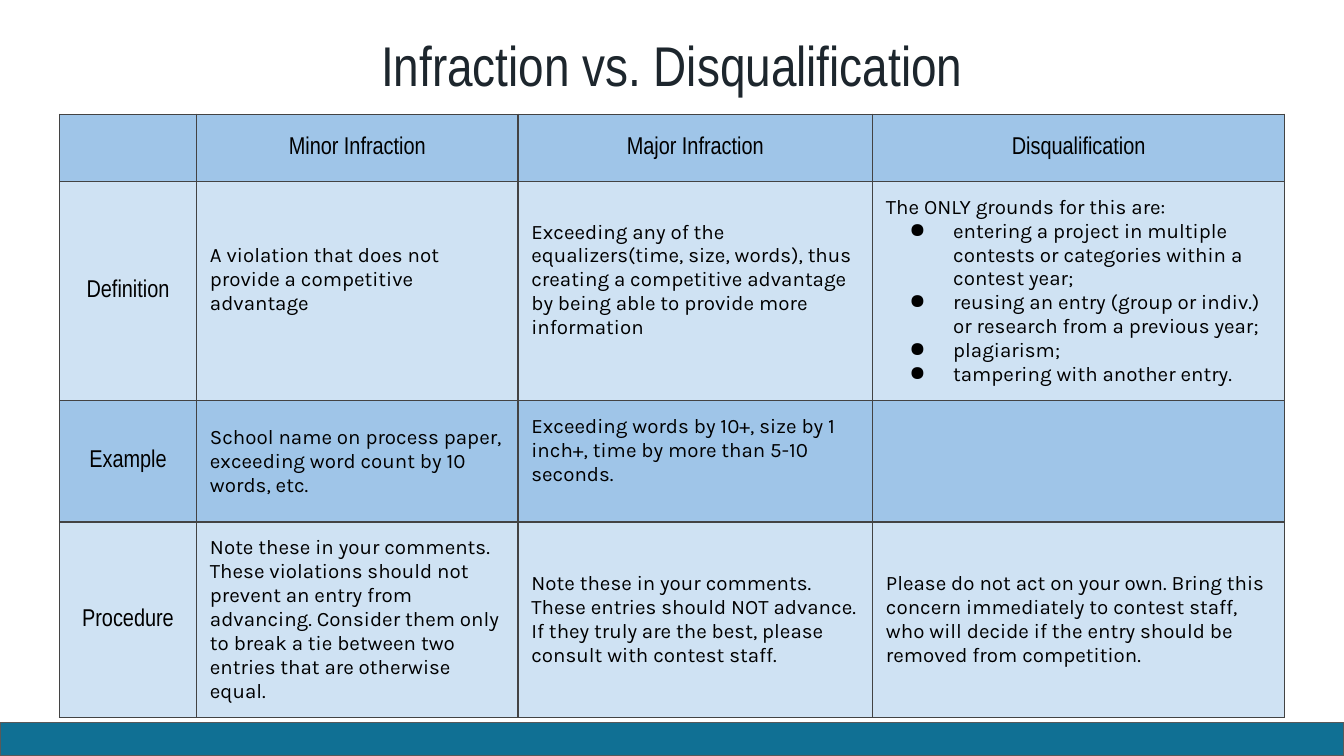
from dataclasses import dataclass

from lxml.etree import SubElement
from pptx import Presentation
from pptx.dml.color import RGBColor
from pptx.enum.shapes import MSO_SHAPE
from pptx.enum.text import MSO_ANCHOR, MSO_AUTO_SIZE, PP_ALIGN
from pptx.oxml.ns import qn
from pptx.util import Pt


@dataclass(frozen=True)
class Theme:
    title: str = "1D262D"
    text: str = "000000"
    bar: str = "107094"
    bar_line: str = "595959"
    border: str = "434343"
    bands: tuple = ("9FC5E8", "CFE2F3")
    head_font: str = "Arial Narrow"
    body_font: str = "Karla"
    title_size: float = 30
    head_size: float = 13
    body_size: float = 11
    line: float = 0.75
    inset: float = 7.2


THEME = Theme()
SLIDE_W, SLIDE_H = 720, 405
COL_WIDTHS = (73.5, 172.2, 190, 220.8)
ROW_HEIGHTS = (36, 117.5, 65, 104.8)
BULLET = "● "

ROWS = (
    ("", "Minor Infraction", "Major Infraction", "Disqualification"),
    ("Definition",
     "A violation that does not provide a competitive advantage",
     "Exceeding any of the equalizers(time, size, words), thus creating a "
     "competitive advantage by being able to provide more information",
     "The ONLY grounds for this are:\n"
     "● entering a project in multiple contests or categories within a contest year;\n"
     "● reusing an entry (group or indiv.) or research from a previous year;\n"
     "● plagiarism;\n"
     "● tampering with another entry."),
    ("Example",
     "School name on process paper, exceeding word count by 10 words, etc.",
     "Exceeding words by 10+, size by 1 inch+, time by more than 5-10 seconds.",
     ""),
    ("Procedure",
     "Note these in your comments. These violations should not prevent an entry "
     "from advancing. Consider them only to break a tie between two entries that "
     "are otherwise equal.",
     "Note these in your comments. These entries should NOT advance. If they "
     "truly are the best, please consult with contest staff.",
     "Please do not act on your own. Bring this concern immediately to contest staff, "
     "who will decide if the entry should be removed from competition."),
)
# Cells (row, column) whose text sits above the middle
RAISED = {(1, 1), (1, 2), (2, 2)}
RAISED_INSET = 19


def rgb(value):
    return RGBColor.from_string(value)


def style_font(font, name, size, color):
    font.name, font.size = name, Pt(size)
    font.color.rgb = rgb(color)


def add_title(s, text, left, top, width, height):
    sp = s.shapes.title
    sp.left, sp.top, sp.width, sp.height = map(Pt, (left, top, width, height))
    tf = sp.text_frame
    tf.text = text
    tf.auto_size = MSO_AUTO_SIZE.NONE
    tf.vertical_anchor = MSO_ANCHOR.TOP
    tf.margin_left = tf.margin_right = Pt(THEME.inset)
    tf.margin_top = tf.margin_bottom = Pt(THEME.inset)
    p = tf.paragraphs[0]
    p.alignment = PP_ALIGN.CENTER
    style_font(p.runs[0].font, THEME.head_font, THEME.title_size, THEME.title)


def add_bar(s, height):
    sp = s.shapes.add_shape(MSO_SHAPE.RECTANGLE, 0, Pt(SLIDE_H - height),
                            Pt(SLIDE_W), Pt(height))
    sp.shadow.inherit = False
    sp.fill.solid()
    sp.fill.fore_color.rgb = rgb(THEME.bar)
    sp.line.color.rgb = rgb(THEME.bar_line)
    sp.line.width = Pt(THEME.line)


def add_bullet(p):
    pPr = p._p.get_or_add_pPr()
    pPr.set("marL", str(Pt(36)))
    pPr.set("indent", str(Pt(-23.5)))
    color = SubElement(pPr, qn("a:buClr"))
    SubElement(color, qn("a:srgbClr"), val=THEME.text)
    SubElement(pPr, qn("a:buChar"), char=BULLET.strip())


def set_borders(cell):
    # Borders come before the fill in the cell properties
    tcPr = cell._tc.get_or_add_tcPr()
    for side in ("lnL", "lnR", "lnT", "lnB"):
        ln = SubElement(tcPr, qn(f"a:{side}"), w=str(Pt(THEME.line)))
        fill = SubElement(ln, qn("a:solidFill"))
        SubElement(fill, qn("a:srgbClr"), val=THEME.border)


def fill_cell(cell, text, band, is_head, bottom):
    set_borders(cell)
    cell.fill.solid()
    cell.fill.fore_color.rgb = rgb(band)
    if not text:
        return
    cell.vertical_anchor = MSO_ANCHOR.MIDDLE
    cell.margin_left = cell.margin_right = cell.margin_top = Pt(THEME.inset)
    cell.margin_bottom = Pt(bottom)
    tf = cell.text_frame
    for i, line in enumerate(text.split("\n")):
        p = tf.add_paragraph() if i else tf.paragraphs[0]
        p.text = line.removeprefix(BULLET)
        if line.startswith(BULLET):
            add_bullet(p)
        p.alignment = PP_ALIGN.CENTER if is_head else PP_ALIGN.LEFT
        name, size = ((THEME.head_font, THEME.head_size) if is_head
                      else (THEME.body_font, THEME.body_size))
        style_font(p.runs[0].font, name, size, THEME.text)


def add_rules_table(s, left, top):
    frame = s.shapes.add_table(len(ROWS), len(COL_WIDTHS), Pt(left), Pt(top),
                               Pt(sum(COL_WIDTHS)), Pt(sum(ROW_HEIGHTS)))
    table = frame.table
    for column, width in zip(table.columns, COL_WIDTHS):
        column.width = Pt(width)
    for r, (row, height) in enumerate(zip(table.rows, ROW_HEIGHTS)):
        row.height = Pt(height)
        for c, text in enumerate(ROWS[r]):
            bottom = RAISED_INSET if (r, c) in RAISED else THEME.inset
            fill_cell(table.cell(r, c), text, THEME.bands[r % 2],
                      r == 0 or c == 0, bottom)


def main():
    prs = Presentation()
    prs.slide_width, prs.slide_height = Pt(SLIDE_W), Pt(SLIDE_H)
    s = prs.slides.add_slide(prs.slide_layouts[5])

    # Footer band, heading and comparison table
    add_bar(s, 18)
    add_title(s, "Infraction vs. Disqualification", 155.5, 9.4, 409, 41.8)
    add_rules_table(s, 31.8, 61.2)

    prs.save("out.pptx")


if __name__ == "__main__":
    main()
